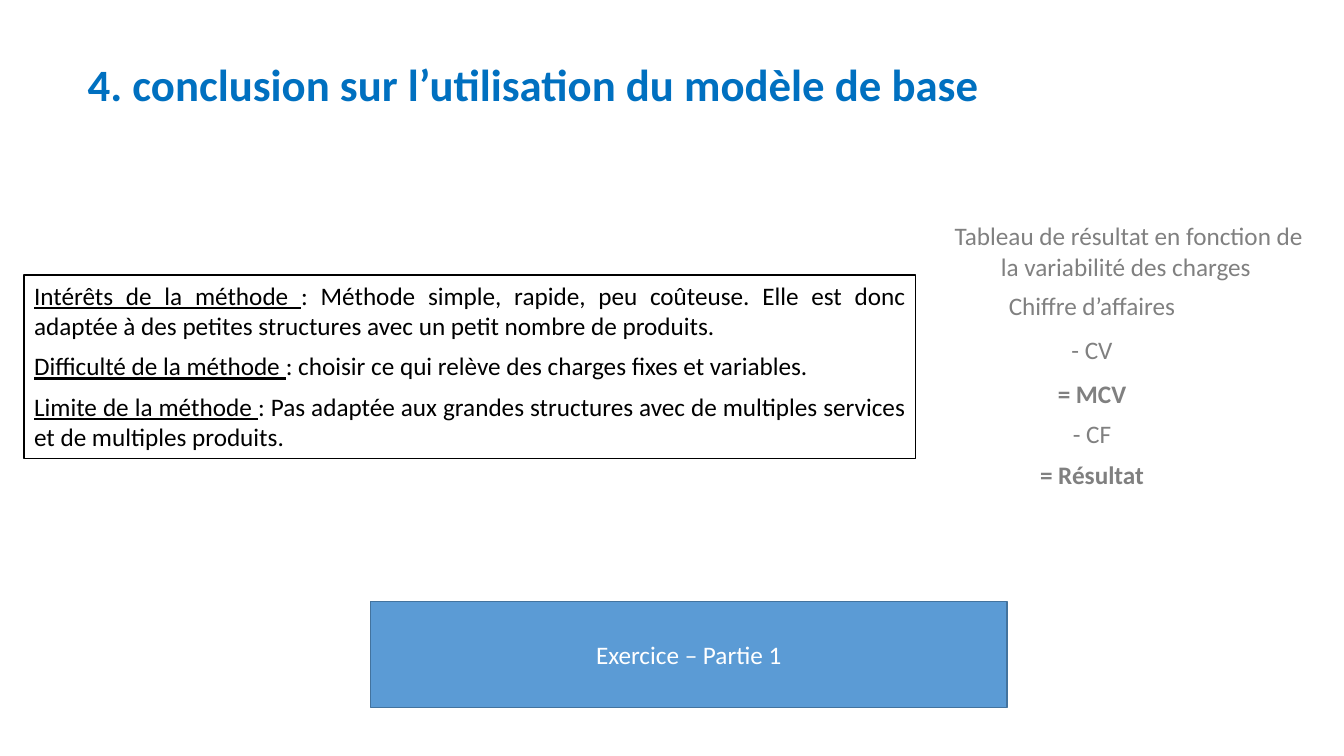
"""Build the conclusion slide on the use of the basic cost model."""
from dataclasses import dataclass

import pptx
import pptx.dml.color
import pptx.enum.shapes
import pptx.enum.text
import pptx.util

ALIGN = pptx.enum.text.PP_ALIGN
ANCHOR = pptx.enum.text.MSO_ANCHOR
EMU_PER_PX = 9525


@dataclass(frozen=True)
class Theme:
    font: str = "Calibri"
    title_size: int = 32
    body_size: int = 18
    paragraph_gap: float = 7.3
    title: str = "0070C0"
    ink: str = "000000"
    paper: str = "FFFFFF"
    muted: str = "808080"
    accent: str = "5B9BD5"
    accent_line: str = "43739E"


THEME = Theme()

METHOD_NOTES = [
    ("Intérêts de la méthode ",
     ": Méthode simple, rapide, peu coûteuse. Elle est donc adaptée à des "
     "petites structures avec un petit nombre de produits. "),
    ("Difficulté de la méthode ",
     ": choisir ce qui relève des charges fixes et variables."),
    ("Limite de la méthode ",
     ": Pas adaptée aux grandes structures avec de multiples services et de "
     "multiples produits."),
]

RESULT_ROWS = [
    ("Tableau de résultat en fonction de la variabilité des charges ", 65),
    ("Chiffre d’affaires", 22),
    ("- CV", 45),
    ("= MCV", 24),
    ("- CF", 35),
    ("= Résultat", 22),
]


def px(*lengths):
    return [pptx.util.Emu(n * EMU_PER_PX) for n in lengths]


def rgb(value):
    return pptx.dml.color.RGBColor.from_string(value)


def style_run(r, color, size=THEME.body_size, bold=False, underline=False):
    r.font.name = THEME.font
    r.font.size = pptx.util.Pt(size)
    r.font.color.rgb = rgb(color)
    r.font.bold = bold
    r.font.underline = underline


def set_line(tf, text, color, **style):
    tf.text = text
    p = tf.paragraphs[0]
    p.alignment = ALIGN.CENTER
    style_run(p.runs[0], color, **style)


def add_title(slide, text, box):
    tf = slide.shapes.add_textbox(*px(*box)).text_frame
    tf.word_wrap = True
    tf.vertical_anchor = ANCHOR.BOTTOM
    tf.margin_left = tf.margin_right = tf.margin_bottom = 0
    set_line(tf, text, THEME.title, size=THEME.title_size, bold=True)


def add_rectangle(slide, box, fill, line):
    sp = slide.shapes.add_shape(
        pptx.enum.shapes.MSO_SHAPE.RECTANGLE, *px(*box))
    sp.shadow.inherit = False
    sp.fill.solid()
    sp.fill.fore_color.rgb = rgb(fill)
    sp.line.color.rgb = rgb(line)
    sp.line.width = pptx.util.Pt(1)
    sp.text_frame.word_wrap = True
    return sp


def add_notes_box(slide, notes, box):
    tf = add_rectangle(slide, box, THEME.paper, THEME.ink).text_frame
    tf.auto_size = pptx.enum.text.MSO_AUTO_SIZE.SHAPE_TO_FIT_TEXT
    tf.vertical_anchor = ANCHOR.TOP
    for i, (heading, body) in enumerate(notes):
        p = tf.add_paragraph() if i else tf.paragraphs[0]
        p.alignment = ALIGN.JUSTIFY
        p.space_before = pptx.util.Pt(THEME.paragraph_gap if i else 0)
        for text, underline in ((heading, True), (body, False)):
            r = p.add_run()
            r.text = text
            style_run(r, THEME.ink, underline=underline)


def add_result_table(slide, rows, left, top, widths):
    heights = [height for _, height in rows]
    table = slide.shapes.add_table(
        len(rows), len(widths),
        *px(left, top, sum(widths), sum(heights))).table
    table.first_row = table.horz_banding = False
    for column, width in zip(table.columns, px(*widths)):
        column.width = width
    for row, height in zip(table.rows, px(*heights)):
        row.height = height
    for cell in table.iter_cells():
        cell.fill.background()
    table.cell(0, 0).merge(table.cell(0, len(widths) - 1))
    for i, (text, _) in enumerate(rows):
        cell = table.cell(i, 0)
        cell.vertical_anchor = ANCHOR.MIDDLE if i > 1 else ANCHOR.TOP
        set_line(cell.text_frame, text, THEME.muted,
                 bold=text.startswith("="))


def add_banner(slide, text, box):
    tf = add_rectangle(slide, box, THEME.accent, THEME.accent_line).text_frame
    tf.vertical_anchor = ANCHOR.MIDDLE
    set_line(tf, text, THEME.paper)


def main():
    prs = pptx.Presentation()
    prs.slide_width, prs.slide_height = px(1280, 720)
    slide = prs.slides.add_slide(prs.slide_layouts[6])
    add_notes_box(slide, METHOD_NOTES, (23, 262, 849, 175))
    add_result_table(slide, RESULT_ROWS, 892, 206, (296, 70))
    add_title(slide, "4. conclusion sur l’utilisation du modèle de base ",
              (-127, -15, 1280, 120))
    add_banner(slide, "Exercice – Partie 1", (353, 573, 606, 101))
    prs.save("out.pptx")


if __name__ == "__main__":
    main()
